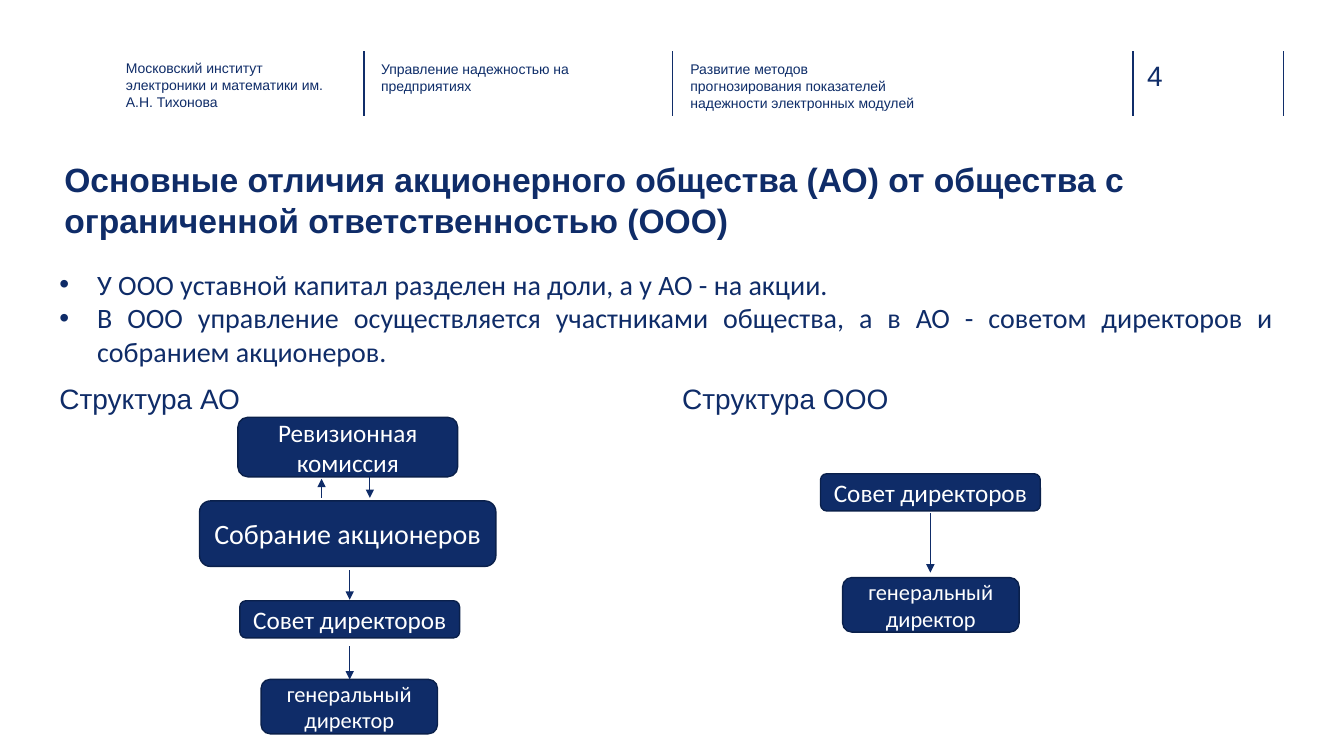
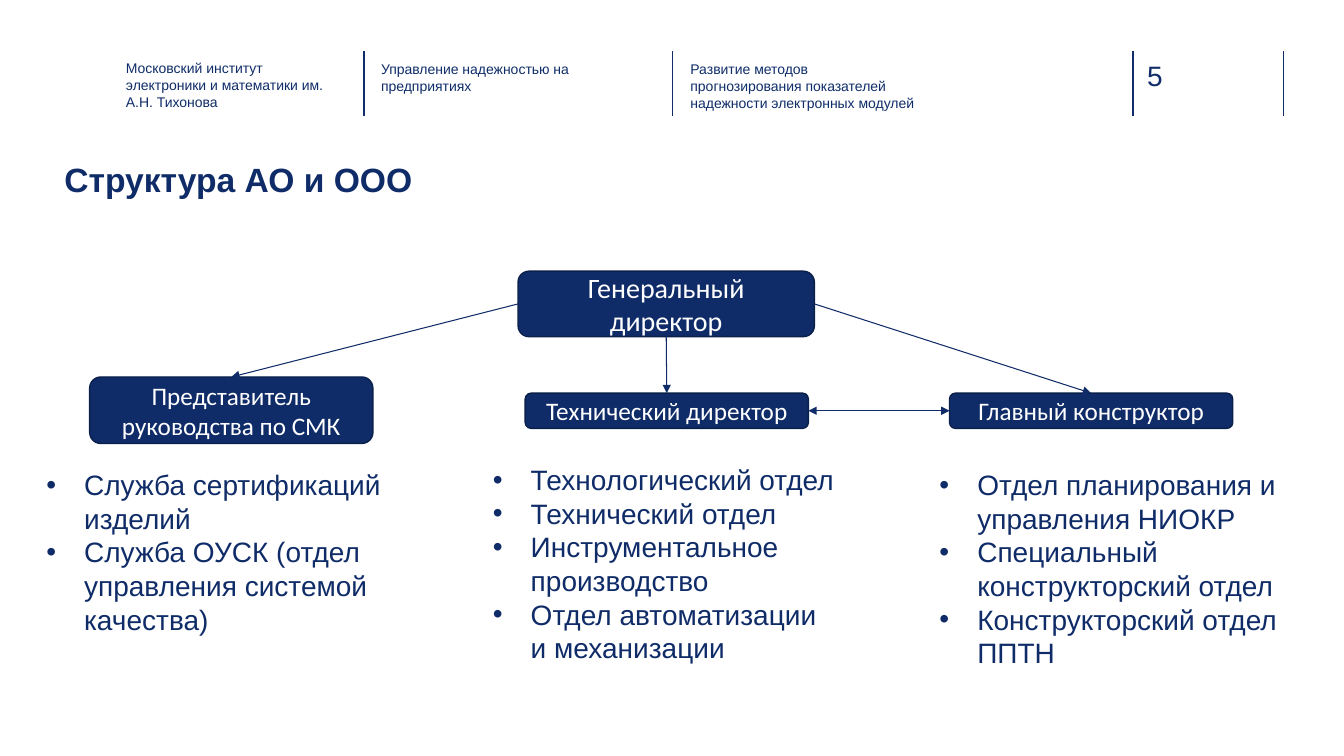
from lxml.etree import SubElement
from pptx import Presentation
from pptx.dml.color import RGBColor
from pptx.enum.shapes import MSO_CONNECTOR as Connector, MSO_SHAPE as Shape
from pptx.enum.text import MSO_ANCHOR as Anchor, PP_ALIGN as Align
from pptx.oxml.ns import qn
from pptx.util import Pt

NAVY = "0F2C68"
BAND = "102D69"
EDGE = "0A204B"
WHITE = "FFFFFF"
INDENT = 27
TOP, LEFT, BOTTOM, RIGHT = range(4)
color = RGBColor.from_string


def write(page, text, left, top, width, height, size=20, font="Arial", ink=NAVY,
          bold=False, align=Align.LEFT, inset=(7.2, 3.6), bullet=False, fill=None):
    area = Pt(left), Pt(top), Pt(width), Pt(height)
    if fill:
        box = page.shapes.add_shape(Shape.ROUNDED_RECTANGLE, *area)
        box.shadow.inherit = False
        box.fill.solid()
        box.fill.fore_color.rgb = color(fill)
        box.line.color.rgb = color(EDGE)
        box.line.width = Pt(1)
    else:
        box = page.shapes.add_textbox(*area)
    frame = box.text_frame
    frame.word_wrap = True
    frame.vertical_anchor = Anchor.MIDDLE if fill else Anchor.TOP
    frame.margin_left = frame.margin_right = Pt(inset[0])
    frame.margin_top = frame.margin_bottom = Pt(inset[1])
    for index, line in enumerate(text.split("\n")):
        para = frame.add_paragraph() if index else frame.paragraphs[0]
        para.alignment = align
        if bullet:
            layout = para._p.get_or_add_pPr()
            layout.set("marL", str(Pt(INDENT)))
            layout.set("indent", str(-Pt(INDENT)))
            tint = SubElement(layout, qn("a:buClr"))
            SubElement(tint, qn("a:srgbClr"), val=ink)
            SubElement(layout, qn("a:buFont"), typeface="Arial")
            SubElement(layout, qn("a:buChar"), char="•")
        span = para.add_run()
        span.text = line
        span.font.name = font
        span.font.size = Pt(size)
        span.font.bold = bold
        span.font.color.rgb = color(ink)
    return box


def draw_line(page, x1, y1, x2, y2, ink=NAVY, width=0.75, ends=("tailEnd",)):
    line = page.shapes.add_connector(Connector.STRAIGHT, Pt(x1), Pt(y1), Pt(x2), Pt(y2))
    line.line.color.rgb = color(ink)
    line.line.width = Pt(width)
    properties = line._element.spPr
    for end in ends:
        SubElement(properties.find(qn("a:ln")), qn("a:" + end), type="triangle")
    SubElement(properties, qn("a:effectLst"))
    return line


deck = Presentation()
deck.slide_width, deck.slide_height = Pt(960), Pt(540)
blank = deck.slide_layouts[6]

titles = [
    "Основные отличия акционерного общества (АО) от общества с ограниченной ответственностью (ООО)",
    "Структура АО и ООО",
]
header = [
    ("Московский институт электроники и математики им. А.Н. Тихонова", 90, 42.5, 150, NAVY),
    ("Управление надежностью на предприятиях", 272.2, 43.2, 162.7, "0E2D69"),
    ("Развитие методов прогнозирования показателей надежности электронных модулей",
     493.2, 43.2, 162.7, "0E2D69"),
]
pages = []
for number, title in enumerate(titles, 4):
    page = deck.slides.add_slide(blank)
    pages.append(page)
    for x in (260, 480.2, 809.3, 916.6):
        draw_line(page, x, 36.7, x, 82.8, ink=BAND, width=1, ends=())
    write(page, str(number), 819.4, 41.8, 52.6, 24.5, ink=BAND, inset=(0, 0))
    write(page, title, 46, 113.8, 859.7, 55.4, size=24, bold=True, inset=(0, 0))
    for text, left, top, width, ink in header:
        write(page, text, left, top, width, 32.4, size=10, ink=ink, inset=(0, 0))

comparison, structure = pages

write(comparison,
      "У ООО уставной капитал разделен на доли, а у АО - на акции.\n"
      "В ООО управление осуществляется участниками общества, а в АО - "
      "советом директоров и собранием акционеров.",
      35.3, 187.2, 881.3, 80, font="Calibri", align=Align.JUSTIFY, bullet=True)
for text, left in (("Структура АО", 35.3), ("Структура ООО", 480.2)):
    write(comparison, text, left, 269.3, 457.2, 31.7, align=Align.JUSTIFY)

nodes = [
    (comparison, "Ревизионная комиссия", 248.4, 298.1, 157, 42.5, 18),
    (comparison, "Собрание акционеров", 248.4, 357.8, 211.7, 46.8, 20),
    (comparison, "Совет директоров", 249.8, 429.1, 157, 26.6, 18),
    (comparison, "генеральный директор", 249.5, 485.3, 126, 38.9, 16),
    (comparison, "Совет директоров", 664.6, 338.4, 157, 26.6, 18),
    (comparison, "генеральный директор", 664.9, 412.6, 126, 38.9, 16),
    (structure, "Генеральный директор", 475.9, 193.7, 211.7, 46.8, 20),
    (structure, "Представитель руководства по СМК", 165.2, 269.3, 202.3, 47.5, 18),
    (structure, "Технический директор", 476.3, 280.8, 202.3, 25.2, 18),
    (structure, "Главный конструктор", 779.4, 280.8, 202.3, 25.2, 18),
]
boxes = {}
for page, text, center, top, width, height, size in nodes:
    boxes[text] = write(page, text, center - width / 2, top, width, height, size=size,
                        font="Calibri", ink=WHITE, align=Align.CENTER, fill=NAVY)

for x, start, end in [(229.7, 355.7, 342), (264.2, 340.6, 355.7), (249.8, 407.5, 428.4),
                      (249.8, 461.5, 485.3), (664.6, 366.5, 409)]:
    draw_line(comparison, x, start, x, end)

links = [
    ("Генеральный директор", LEFT, "Представитель руководства по СМК", TOP, ("tailEnd",)),
    ("Генеральный директор", BOTTOM, "Технический директор", TOP, ("tailEnd",)),
    ("Генеральный директор", RIGHT, "Главный конструктор", TOP, ("tailEnd",)),
    ("Технический директор", RIGHT, "Главный конструктор", LEFT, ("headEnd", "tailEnd")),
]
for source, source_side, target, target_side, ends in links:
    link = draw_line(structure, 0, 0, 0, 0, ends=ends)
    link.begin_connect(boxes[source], source_side)
    link.end_connect(boxes[target], target_side)

departments = [
    ("Служба сертификаций изделий\nСлужба ОУСК (отдел управления системой качества)", 330.5),
    ("Технологический отдел\nТехнический отдел\nИнструментальное производство\n"
     "Отдел автоматизации и механизации", 326.9),
    ("Отдел планирования и управления НИОКР\nСпециальный конструкторский отдел\n"
     "Конструкторский отдел ППТН", 330.5),
]
for column, (text, top) in enumerate(departments):
    write(structure, text, 26 + 319 * column, top, 257.8, 152.6, bullet=True)

deck.save("out.pptx")
